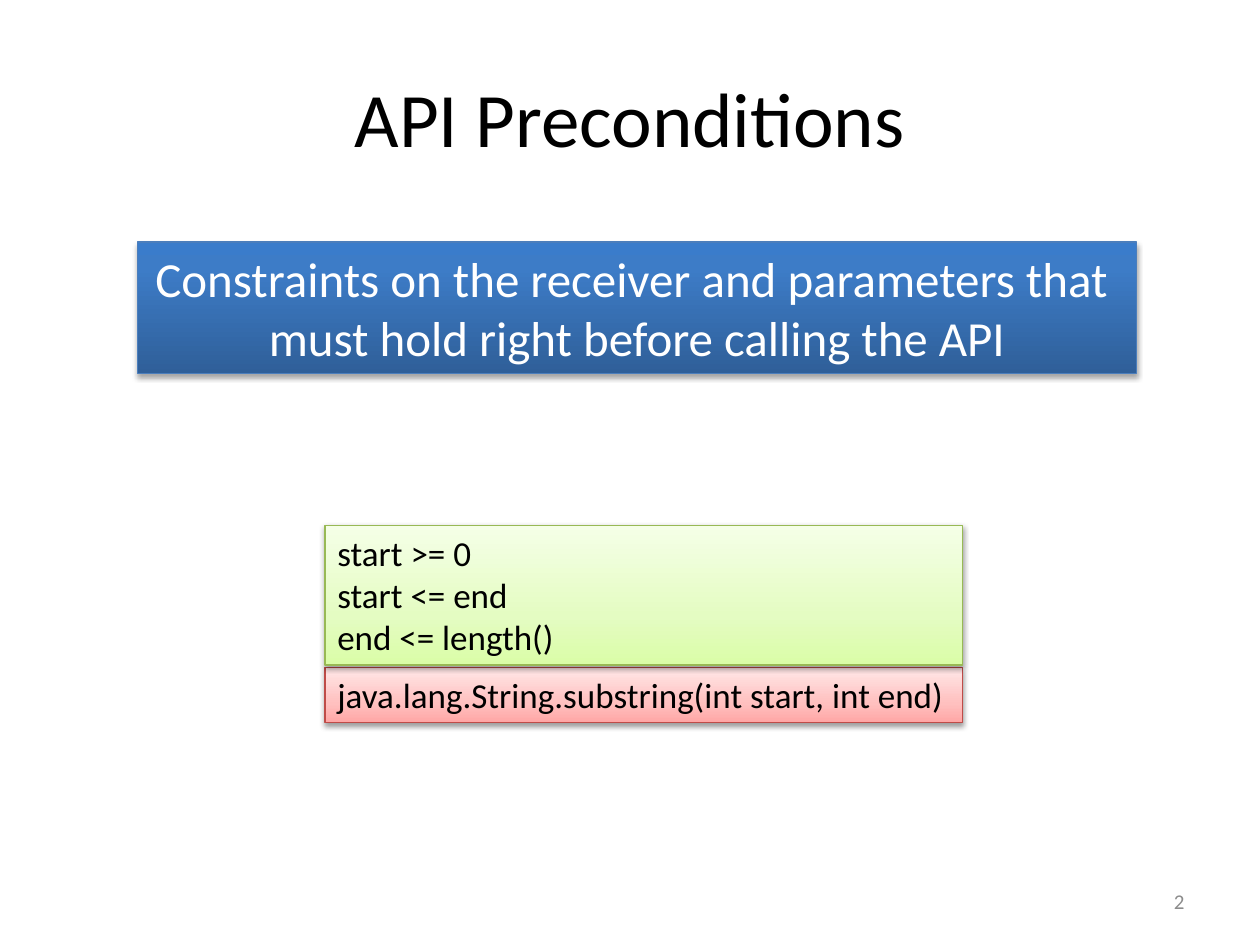
from lxml.etree import SubElement
from pptx import Presentation
from pptx.dml.color import RGBColor
from pptx.enum.shapes import MSO_SHAPE
from pptx.enum.text import MSO_ANCHOR, MSO_AUTO_SIZE, PP_ALIGN
from pptx.oxml.ns import qn
from pptx.util import Cm, Pt

COLORS = {
    "text": "000000", "light": "FFFFFF", "number": "8C8C8C", "shadow": "000000",
    "blue line": "4B7EBC", "red line": "BF4C48", "green line": "98B955",
}
# Gradient stops run from the bottom edge to the top edge: percent, colour
GRADIENTS = {
    "blue": [(0, "2F5F99"), (80, "3D7CC7"), (100, "3A7CCB")],
    "red": [(0, "FFA6A5"), (35, "FFC0BF"), (100, "FFE7E7")],
    "green": [(0, "DAFDA7"), (35, "E4FCC2"), (100, "F5FFE7")],
}


class SlideBuilder:
    font = "Calibri"

    def __init__(self, deck):
        self.page = deck.slides.add_slide(deck.slide_layouts[5])

    def set_text(self, shape, text, size, color, align, anchor, wrap=True):
        frame = shape.text_frame
        frame.text = text
        frame.word_wrap = wrap
        frame.vertical_anchor = anchor
        for para in frame.paragraphs:
            para.alignment = align
            for span in para.runs:
                span.font.name = self.font
                span.font.size = Pt(size)
                span.font.color.rgb = RGBColor.from_string(COLORS[color])

    def title(self, text, left, top, width, height):
        title = self.page.shapes.title
        title.left, title.top = Cm(left), Cm(top)
        title.width, title.height = Cm(width), Cm(height)
        self.set_text(title, text, 44, "text", PP_ALIGN.CENTER, MSO_ANCHOR.MIDDLE)

    def page_number(self, text, left, top, width, height):
        box = self.page.shapes.add_textbox(Cm(left), Cm(top), Cm(width), Cm(height))
        self.set_text(box, text, 12, "number", PP_ALIGN.RIGHT, MSO_ANCHOR.MIDDLE)

    def panel(self, text, left, top, width, height, hue, size=20, color="text",
              align=PP_ALIGN.LEFT, wrap=False, shadow_alpha=38, shadow_distance=1.6):
        box = self.page.shapes.add_shape(
            MSO_SHAPE.RECTANGLE, Cm(left), Cm(top), Cm(width), Cm(height))
        self.gradient(box, GRADIENTS[hue])
        box.line.color.rgb = RGBColor.from_string(COLORS[hue + " line"])
        box.line.width = Pt(0.75)
        self.shadow(box, shadow_alpha, shadow_distance)
        self.set_text(box, text, size, color, align, MSO_ANCHOR.TOP, wrap)
        box.text_frame.auto_size = MSO_AUTO_SIZE.SHAPE_TO_FIT_TEXT

    def gradient(self, box, stops):
        box.fill.gradient()
        box.fill.gradient_angle = 90
        stop_list = box.element.spPr.find(qn("a:gradFill")).find(qn("a:gsLst"))
        for stop in list(stop_list):
            stop_list.remove(stop)
        for percent, color in stops:
            stop = SubElement(stop_list, qn("a:gs"), pos=str(percent * 1000))
            SubElement(stop, qn("a:srgbClr"), val=color)

    def shadow(self, box, alpha, distance):
        box.shadow.inherit = False
        effects = box.element.spPr.find(qn("a:effectLst"))
        outer = SubElement(effects, qn("a:outerShdw"), blurRad=str(Pt(3.1)),
                           dist=str(Pt(distance)), dir="5400000", rotWithShape="0")
        color = SubElement(outer, qn("a:srgbClr"), val=COLORS["shadow"])
        SubElement(color, qn("a:alpha"), val=str(alpha * 1000))


def main():
    deck = Presentation()
    deck.slide_width, deck.slide_height = Cm(25.4), Cm(19.05)
    slide = SlideBuilder(deck)

    # Title and page number
    slide.title("API Preconditions", 1.27, 0.76, 22.86, 3.18)
    slide.page_number("2", 18.2, 17.66, 5.93, 1.01)

    # Definition
    slide.panel("Constraints on the receiver and parameters that \n"
                "must hold right before calling the API",
                2.77, 4.88, 20.14, 2.65, "blue", size=28, color="light",
                align=PP_ALIGN.CENTER, shadow_alpha=35, shadow_distance=1.8)

    # Example method with its preconditions above
    left, width = 6.55, 12.85
    slide.panel("java.lang.String.substring(int start, int end)",
                left, 13.46, width, 1.11, "red")
    slide.panel("start >= 0\nstart <= end\nend <= length()",
                left, 10.59, width, 2.82, "green", wrap=True)

    deck.save("out.pptx")


if __name__ == "__main__":
    main()
